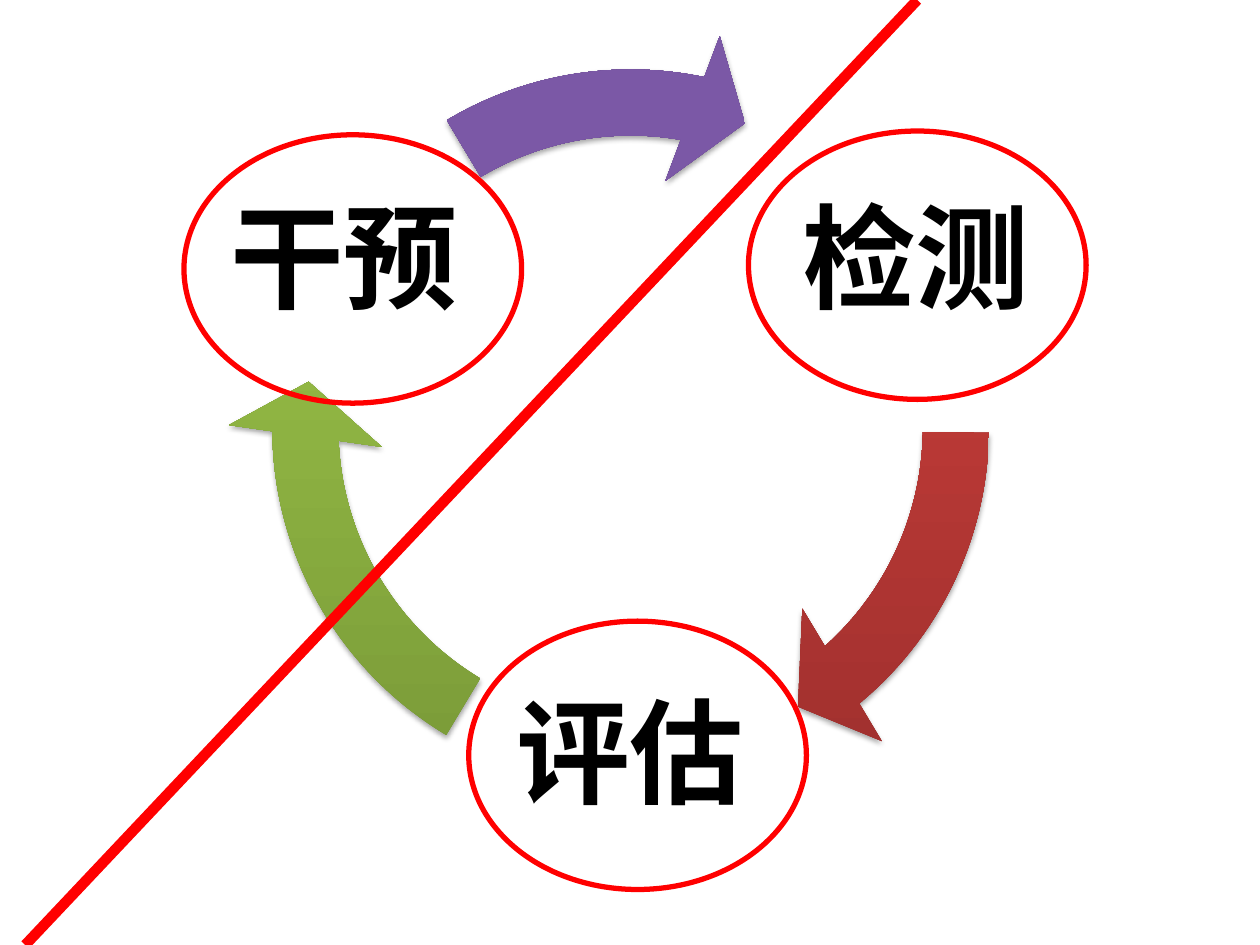
"""Build a cycle slide of three stages split by a diagonal line."""
from copy import deepcopy
from lxml import etree
from pptx import Presentation
from pptx.dml.color import RGBColor
from pptx.enum.shapes import MSO_CONNECTOR, MSO_SHAPE
from pptx.enum.text import MSO_ANCHOR, PP_ALIGN
from pptx.oxml import parse_xml
from pptx.oxml.ns import nsdecls, qn
from pptx.util import Pt

RED = "FF0000"
LABELS = [
    ("检测", 426.24, 53.28, 194.4),
    ("评估", 262.8, 336.24, 194.4),
    ("干预", 99.36, 82.8, 135.36),
]
ARROWS = [
    (29.662, 0.502, ("9C2F2D", "CB3E3A", "CE3B37")),
    (107.126, 72.582, ("779737", "9BC348", "9DC746")),
    (168.589, 143.486, ("5F4480", "7B58A6", "7C57A8")),
]
STOPS = (0, 0.8, 1)
RINGS = [(267.84, 354.96), (105.12, 77.04), (427.68, 74.88)]
RING_W, RING_H = 192.96, 153.36
CYCLE = (130.32, 14.4, 460.08, 460.08)
SHADOW = (
    f'<a:outerShdw {nsdecls("a")} blurRad="{Pt(3.1)}" dist="{Pt(1.8)}" dir="5400000" '
    'rotWithShape="0"><a:srgbClr val="000000"><a:alpha val="35000"/></a:srgbClr></a:outerShdw>'
)


def rgb(color):
    return RGBColor.from_string(color)


def pts(*values):
    return [Pt(v) for v in values]


def add_label(s, text, x, y, h):
    tf = s.shapes.add_textbox(*pts(x, y, 194.4, h)).text_frame
    tf.word_wrap = True
    tf.vertical_anchor = MSO_ANCHOR.MIDDLE
    tf.margin_left = tf.margin_right = tf.margin_top = tf.margin_bottom = Pt(6.5)
    p = tf.paragraphs[0]
    p.text = text
    p.alignment = PP_ALIGN.CENTER
    p.line_spacing = 0.9
    p.space_after = Pt(22.75)
    p.font.name, p.font.size, p.font.bold = "Calibri", Pt(65), True
    p.font.color.rgb = rgb("000000")


def add_arrow(s, end, start, colors):
    sp = s.shapes.add_shape(MSO_SHAPE.CIRCULAR_ARROW, *pts(*CYCLE))
    for i, value in enumerate((0.082, 5.756, end, start, 0.096)):
        sp.adjustments[i] = value
    sp.line.fill.background()
    sp.fill.gradient()
    sp.fill.gradient_angle = 90
    stops = sp.element.spPr.find(".//" + qn("a:gsLst"))
    stops.append(deepcopy(stops[-1]))
    for stop, position, color in zip(sp.fill.gradient_stops, STOPS, colors):
        stop.position = position
        stop.color.rgb = rgb(color)
    sp.shadow.inherit = False
    sp.element.spPr.find(qn("a:effectLst")).append(parse_xml(SHADOW))


def add_ring(s, x, y):
    sp = s.shapes.add_shape(MSO_SHAPE.OVAL, *pts(x, y, RING_W, RING_H))
    sp.shadow.inherit = False
    sp.fill.background()
    sp.line.color.rgb, sp.line.width = rgb(RED), Pt(3)


def add_divider(s):
    line = s.shapes.add_connector(MSO_CONNECTOR.STRAIGHT, *pts(524.16, 0, 14.4, 540))
    line.line.color.rgb, line.line.width = rgb(RED), Pt(6)
    etree.SubElement(line.element.spPr, qn("a:effectLst"))


def main():
    prs = Presentation()
    prs.slide_width, prs.slide_height = pts(720, 540)
    s = prs.slides.add_slide(prs.slide_layouts[6])
    for label, arrow in zip(LABELS, ARROWS):
        add_label(s, *label)
        add_arrow(s, *arrow)
    for ring in RINGS:
        add_ring(s, *ring)
    add_divider(s)
    prs.save("out.pptx")


if __name__ == "__main__":
    main()
